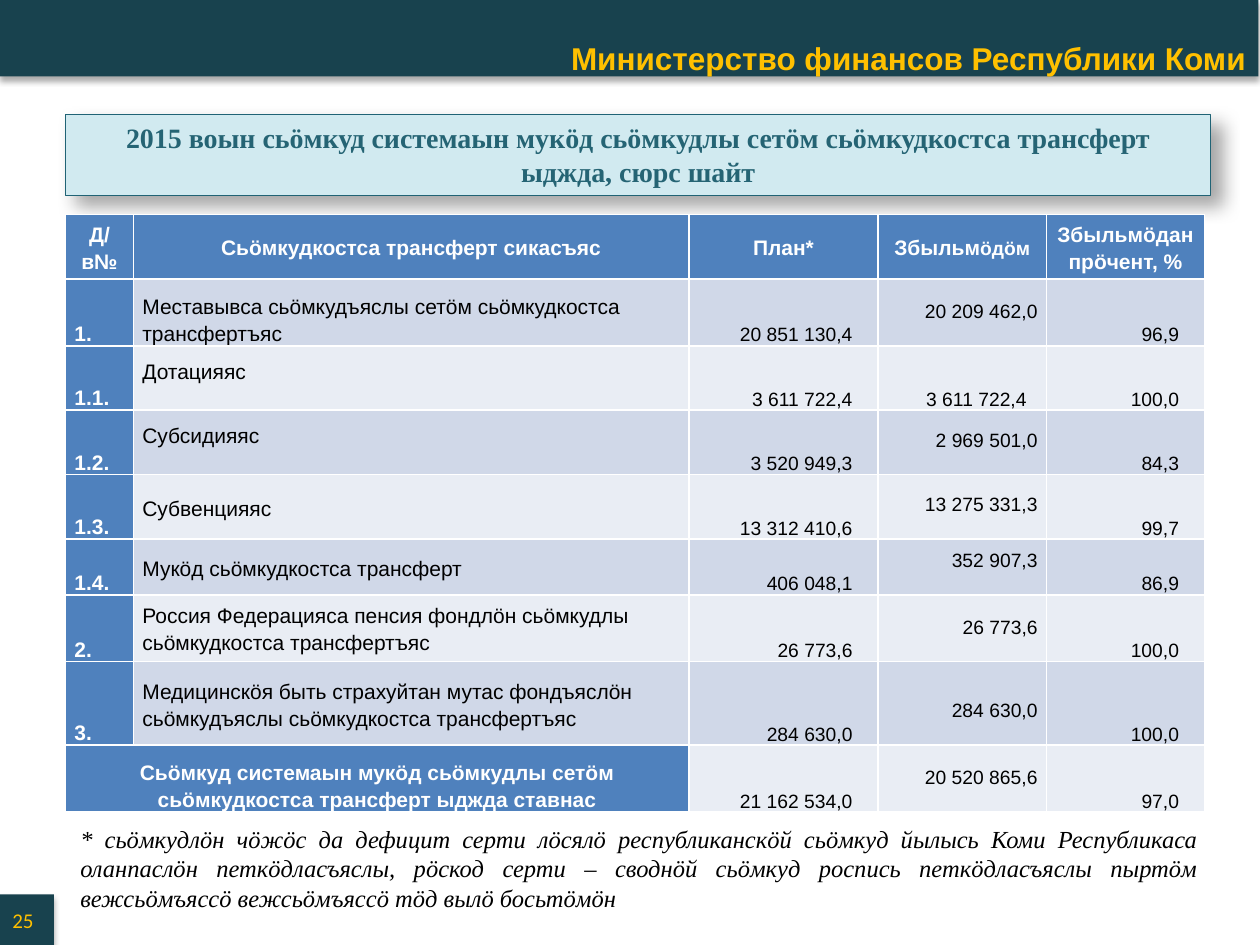
from dataclasses import dataclass

from lxml import etree
from pptx import Presentation
from pptx.dml.color import RGBColor
from pptx.enum.shapes import MSO_SHAPE
from pptx.enum.text import MSO_ANCHOR, PP_ALIGN
from pptx.oxml.ns import qn
from pptx.util import Cm, Pt

RECTANGLE = MSO_SHAPE.RECTANGLE
TOP, MIDDLE, BOTTOM = MSO_ANCHOR.TOP, MSO_ANCHOR.MIDDLE, MSO_ANCHOR.BOTTOM
LEFT, CENTER, RIGHT, JUSTIFY = PP_ALIGN.LEFT, PP_ALIGN.CENTER, PP_ALIGN.RIGHT, PP_ALIGN.JUSTIFY


@dataclass(frozen=True)
class Theme:
    dark: str = "18424E"
    gold: str = "FFC000"
    panel: str = "D1EAF0"
    panel_line: str = "206375"
    panel_text: str = "256474"
    table_head: str = "4F81BD"
    bands: tuple = ("D0D8E8", "E9EDF4")
    black: str = "000000"
    white: str = "FFFFFF"
    sans: str = "Arial"
    serif: str = "Times New Roman"
    number_font: str = "Calibri"
    brand_size: int = 18
    title_size: int = 16
    note_size: int = 14
    label_size: int = 12
    value_size: int = 11


@dataclass(frozen=True)
class Box:
    left: float
    top: float
    width: float
    height: float

    def lengths(self):
        return Cm(self.left), Cm(self.top), Cm(self.width), Cm(self.height)


THEME = Theme()
BAR_SHADOW = dict(alpha=32, blur=3.5, distance=2.2, angle=90)
PANEL_SHADOW = dict(alpha=35, blur=10.2, distance=8, angle=45)

COLUMN_WIDTHS = (1.37, 11.2, 3.81, 3.4, 3.18)
ROW_HEIGHTS = (1.3, 1.35, 1.3, 1.3, 1.3, 1.12, 1.35, 1.68, 1.35)
HEADINGS = (
    ("Д/в№",), ("Сьӧмкудкостса трансферт сикасъяс",), ("План*",),
    ("Збыльм", "ӧдӧм"), ("Збыльмӧдан прӧчент, %",),
)
TRANSFERS = (
    ("1.", "Меставывса сьӧмкудъяслы сетӧм сьӧмкудкостса трансфертъяс",
     "20 851 130,4", "20 209 462,0", "96,9"),
    ("1.1.", "Дотацияяс", "3 611 722,4", "3 611 722,4", "100,0"),
    ("1.2.", "Субсидияяс", "3 520 949,3", "2 969 501,0", "84,3"),
    ("1.3.", "Субвенцияяс", "13 312 410,6", "13 275 331,3", "99,7"),
    ("1.4.", "Мукӧд сьӧмкудкостса трансферт", "406 048,1", "352 907,3", "86,9"),
    ("2.", "Россия Федерацияса пенсия фондлӧн сьӧмкудлы сьӧмкудкостса трансфертъяс",
     "26 773,6", "26 773,6", "100,0"),
    ("3.", "Медицинскӧя быть страхуйтан мутас фондъяслӧн сьӧмкудъяслы "
     "сьӧмкудкостса трансфертъяс", "284 630,0", "284 630,0", "100,0"),
)
TOTAL_LABEL = ("Сьӧмкуд системаын мукӧд сьӧмкудлы сетӧм",
               "сьӧмкудкостса трансферт ыджда ставнас")
TOTAL_VALUES = ("21 162 534,0", "20 520 865,6", "97,0")
LIFTED_NAMES = ("1.1.", "1.2.")
CENTERED_NAMES = ("1.3.", "1.4.", "2.", "3.")
UNLIFTED_RESULT = "1.1."


def write(para, text, size, color, font=THEME.sans, bold=False, italic=False,
          align=LEFT, spacing=None):
    para.alignment = align
    if spacing:
        para.line_spacing = spacing
    span = para.add_run()
    span.text = text
    span.font.size = Pt(size)
    span.font.name = font
    span.font.bold = bold
    span.font.italic = italic
    span.font.color.rgb = RGBColor.from_string(color)


def add_panel(page, box, fill, shadow, anchor, line=None):
    panel = page.shapes.add_shape(RECTANGLE, *box.lengths())
    panel.fill.solid()
    panel.fill.fore_color.rgb = RGBColor.from_string(fill)
    if line:
        panel.line.color.rgb = RGBColor.from_string(line)
        panel.line.width = Pt(0.75)
    else:
        panel.line.fill.background()
    panel.shadow.inherit = False
    effects = panel._element.spPr.find(qn("a:effectLst"))
    outer = etree.SubElement(
        effects, qn("a:outerShdw"), blurRad=str(Pt(shadow["blur"])),
        dist=str(Pt(shadow["distance"])), dir=str(shadow["angle"] * 60000),
        algn="tl", rotWithShape="0")
    tint = etree.SubElement(outer, qn("a:srgbClr"), val=THEME.black)
    etree.SubElement(tint, qn("a:alpha"), val=str(shadow["alpha"] * 1000))
    frame = panel.text_frame
    frame.word_wrap = True
    frame.vertical_anchor = anchor
    return frame


def add_brand_bar(page, box):
    frame = add_panel(page, box, THEME.dark, BAR_SHADOW, BOTTOM)
    frame.margin_bottom = 0
    write(frame.paragraphs[0], "Министерство финансов Республики Коми",
          size=THEME.brand_size, color=THEME.gold, bold=True, align=RIGHT)


def add_page_number(page, box):
    frame = add_panel(page, box, THEME.dark, BAR_SHADOW, MIDDLE)
    write(frame.paragraphs[0], "25", size=THEME.label_size, color=THEME.gold,
          font=THEME.number_font)


def add_title(page, box):
    frame = add_panel(page, box, THEME.panel, PANEL_SHADOW, TOP, line=THEME.panel_line)
    write(frame.paragraphs[0],
          "2015 воын сьӧмкуд системаын мукӧд сьӧмкудлы сетӧм сьӧмкудкостса "
          "трансферт ыджда, сюрс шайт",
          size=THEME.title_size, color=THEME.panel_text, font=THEME.serif,
          bold=True, align=CENTER)


def add_footnote(page, box):
    frame = page.shapes.add_textbox(*box.lengths()).text_frame
    frame.word_wrap = True
    write(frame.paragraphs[0],
          "* сьӧмкудлӧн чӧжӧс да дефицит серти лӧсялӧ республиканскӧй сьӧмкуд йылысь "
          "Коми Республикаса оланпаслӧн петкӧдласъяслы, рӧскод серти – своднӧй сьӧмкуд "
          "роспись петкӧдласъяслы пыртӧм вежсьӧмъяссӧ вежсьӧмъяссӧ тӧд вылӧ босьтӧмӧн",
          size=THEME.note_size, color=THEME.black, font=THEME.serif,
          italic=True, align=JUSTIFY)


def prepare_cell(cell, fill, anchor=BOTTOM, right=0.18, lift=0):
    cell.fill.solid()
    cell.fill.fore_color.rgb = RGBColor.from_string(fill)
    cell.vertical_anchor = anchor
    cell.margin_left, cell.margin_right = Cm(0.18), Cm(right)
    cell.margin_top, cell.margin_bottom = 0, Cm(lift)
    return cell.text_frame


def fill_values(cells, values, fill, lift):
    insets = (0.51, 0.18 if lift else 0.4, 0.51)
    for cell, value, right, rise in zip(cells, values, insets, (0, lift, 0)):
        frame = prepare_cell(cell, fill, right=right, lift=rise)
        write(frame.paragraphs[0], value, size=THEME.value_size, color=THEME.black,
              align=RIGHT, spacing=1.15)


def add_transfer_table(page, box):
    table = page.shapes.add_table(len(ROW_HEIGHTS), len(COLUMN_WIDTHS), *box.lengths()).table
    for column, width in zip(table.columns, COLUMN_WIDTHS):
        column.width = Cm(width)
    for row, height in zip(table.rows, ROW_HEIGHTS):
        row.height = Cm(height)
    label = dict(size=THEME.label_size, color=THEME.white, bold=True, spacing=1.15)

    for cell, parts in zip(table.rows[0].cells, HEADINGS):
        para = prepare_cell(cell, THEME.table_head, MIDDLE).paragraphs[0]
        for part, size in zip(parts, (THEME.label_size, THEME.value_size)):
            write(para, part, **{**label, "size": size}, align=CENTER)

    for index, (number, name, *values) in enumerate(TRANSFERS):
        cells = list(table.rows[index + 1].cells)
        band = THEME.bands[index % 2]
        write(prepare_cell(cells[0], THEME.table_head).paragraphs[0], number, **label)
        frame = prepare_cell(cells[1], band, MIDDLE if number in CENTERED_NAMES else BOTTOM,
                             lift=0.54 if number in LIFTED_NAMES else 0)
        write(frame.paragraphs[0], name, size=THEME.label_size, color=THEME.black, spacing=1.15)
        fill_values(cells[2:], values, band, 0 if number == UNLIFTED_RESULT else 0.47)

    cells = list(table.rows[len(ROW_HEIGHTS) - 1].cells)
    cells[0].merge(cells[1])
    frame = prepare_cell(cells[0], THEME.table_head)
    write(frame.paragraphs[0], TOTAL_LABEL[0], **label, align=CENTER)
    write(frame.add_paragraph(), TOTAL_LABEL[1], **label, align=CENTER)
    fill_values(cells[2:], TOTAL_VALUES, THEME.bands[1], 0.47)


def main():
    deck = Presentation()
    deck.slide_width, deck.slide_height = Cm(25.4), Cm(19.05)
    page = deck.slides.add_slide(deck.slide_layouts[6])
    add_brand_bar(page, Box(0, -0.03, 25.37, 1.57))
    add_page_number(page, Box(0, 18.03, 1.09, 1.02))
    add_footnote(page, Box(1.37, 16.48, 23.04, 2.06))
    add_title(page, Box(1.32, 2.31, 23.09, 1.63))
    add_transfer_table(page, Box(1.32, 4.32, sum(COLUMN_WIDTHS), sum(ROW_HEIGHTS)))
    deck.save("out.pptx")


if __name__ == "__main__":
    main()
